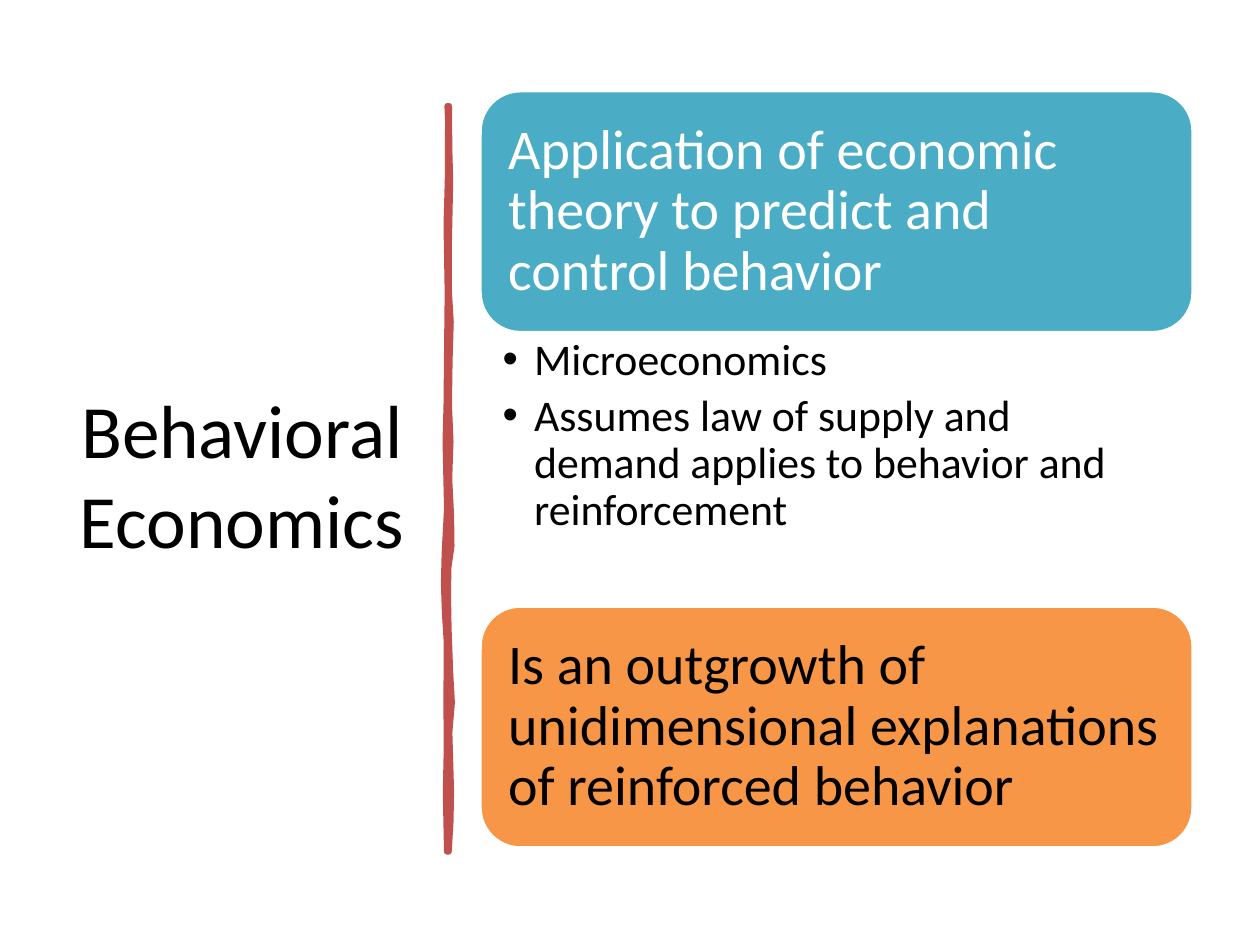
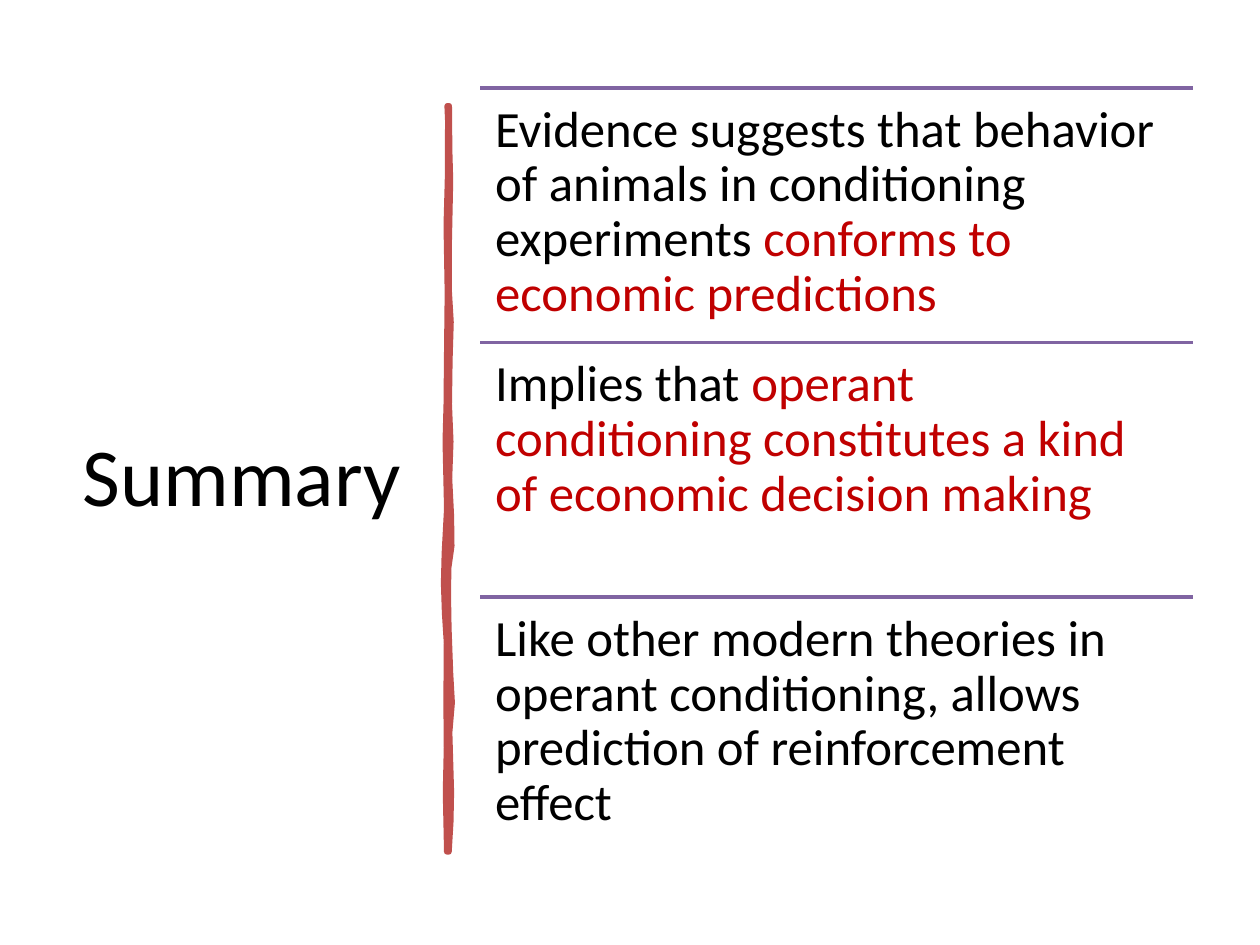
from lxml.etree import SubElement
from pptx import Presentation
from pptx.dml.color import RGBColor
from pptx.enum.shapes import MSO_CONNECTOR, MSO_SHAPE
from pptx.enum.text import MSO_ANCHOR, PP_ALIGN
from pptx.oxml.ns import qn
from pptx.util import Inches, Pt

COLORS = {"text": "000000", "light": "FFFFFF", "divider": "C0504D", "teal": "4BACC6",
          "orange": "F79646", "rule": "8064A2", "accent": "C00000"}
COLS, ROWS = 100, 75
CELL = Inches(10) / COLS
TITLE_BOX = (5.2, 7, 28, 61.1)
DIVIDER_BOX = (35.55, 8.4, 0, 59.2)
CARDS_BOX = (38.1, 7.2, 56.6, 60.1)
RULES_BOX = (38.1, 7, 56.6, 60.6)
RIGHT_EDGE = [(0, 0.1), (0.06, 0.13), (0.1, 0.2), (0.18, 0.1), (0.25, 0.1), (0.29, 0.24),
              (0.34, 0.15), (0.4, 0.1), (0.45, 0.22), (0.5, 0.12), (0.55, 0.27), (0.59, 0.3),
              (0.62, 0.05), (0.66, 0.03), (0.7, 0.07), (0.76, 0.2), (0.8, 0.33), (0.84, 0.13),
              (0.92, 0.27), (0.96, 0.22), (1, 0.08)]
LEFT_EDGE = [(1, -0.08), (0.92, -0.18), (0.86, -0.1), (0.8, -0.13), (0.72, -0.1),
             (0.68, -0.25), (0.64, -0.33), (0.6, -0.27), (0.54, -0.08), (0.45, -0.2),
             (0.4, -0.12), (0.33, -0.08), (0.25, -0.03), (0.16, -0.12), (0.1, -0.02),
             (0.02, 0), (0, -0.05)]


def grid(*values):
    """Turn grid units into slide lengths."""
    return [round(v * CELL) for v in values]


def rgb(name):
    """Look up a palette colour."""
    return RGBColor.from_string(COLORS[name])


def apply(obj, fmt):
    """Set every attribute named in a format dict."""
    for name, value in fmt.items():
        setattr(obj, name, value)


def frame(sp, inset, anchor=MSO_ANCHOR.TOP):
    """Prepare a wrapping text frame; inset is left, top, right, bottom in inches."""
    tf = sp.text_frame
    sides = ("margin_left", "margin_top", "margin_right", "margin_bottom")
    apply(tf, {"word_wrap": True, "vertical_anchor": anchor,
               **{side: Inches(v) for side, v in zip(sides, inset)}})
    return tf


def write(p, runs, size, fmt):
    """Fill a paragraph with (text, colour) runs."""
    apply(p, fmt)
    for text, color in runs:
        r = p.add_run()
        r.text = text
        apply(r.font, {"name": "Calibri", "size": Pt(size)})
        r.font.color.rgb = rgb(color)


def paint(sp, fill, line, width):
    """Give a shape a flat fill and outline."""
    sp.shadow.inherit = False
    sp.fill.solid()
    sp.fill.fore_color.rgb = rgb(fill)
    sp.line.color.rgb = rgb(line)
    sp.line.width = Pt(width)


def add_title(s, box, text, size):
    """Place the centred slide title."""
    tf = frame(s.shapes.add_textbox(*grid(*box)), (0.1, 0.05, 0.1, 0.05), MSO_ANCHOR.MIDDLE)
    write(tf.paragraphs[0], [(text, "text")], size, {"alignment": PP_ALIGN.CENTER})


def add_divider(s, box):
    """Draw the hand-drawn vertical stroke around the box's left side."""
    x, y, _, h = box
    points = [grid(x + dx, y + share * h) for share, dx in RIGHT_EDGE + LEFT_EDGE]
    fb = s.shapes.build_freeform(*points[0])
    fb.add_line_segments(points[1:], close=True)
    paint(fb.convert_to_shape(), "divider", "divider", 3.25)


def add_card(s, box, text, fill, color):
    """Place a rounded statement card."""
    sp = s.shapes.add_shape(MSO_SHAPE.ROUNDED_RECTANGLE, *grid(*box))
    paint(sp, fill, "light", 2)
    tf = frame(sp, (0.13,) * 4, MSO_ANCHOR.MIDDLE)
    write(tf.paragraphs[0], [(text, color)], 32,
          {"alignment": PP_ALIGN.LEFT, "line_spacing": 0.9})


def add_bullets(s, box, items):
    """Place a bulleted list."""
    tf = frame(s.shapes.add_textbox(*grid(*box)), (0.18, 0.04, 0.25, 0.04))
    for i, item in enumerate(items):
        p = tf.add_paragraph() if i else tf.paragraphs[0]
        write(p, [(item, "text")], 25, {"line_spacing": 0.9, "space_after": Pt(5)})
        pPr = p._p.get_or_add_pPr()
        pPr.set("marL", str(Inches(0.25)))
        pPr.set("indent", str(-Inches(0.25)))
        SubElement(pPr, qn("a:buFont"), typeface="Arial")
        SubElement(pPr, qn("a:buChar"), char="•")


def add_cards(s, box):
    """Stack two cards with a bulleted list between them."""
    x, y, w, h = box
    card_h = 19.2
    add_card(s, (x, y, w, card_h),
             "Application of economic theory to predict and control behavior", "teal", "light")
    add_bullets(s, (x, y + card_h, w, h - 2 * card_h),
                ["Microeconomics",
                 "Assumes law of supply and demand applies to behavior and reinforcement"])
    add_card(s, (x, y + h - card_h, w, card_h),
             "Is an outgrowth of unidimensional explanations of reinforced behavior",
             "orange", "text")


def add_ruled_rows(s, box, rows):
    """Split the box into equal rows, each under a rule."""
    x, y, w, h = box
    row_h = h / len(rows)
    for i, runs in enumerate(rows):
        top = y + i * row_h
        c = s.shapes.add_connector(MSO_CONNECTOR.STRAIGHT, *grid(x, top, x + w, top))
        c.line.color.rgb = rgb("rule")
        c.line.width = Pt(2)
        SubElement(c._element.spPr, qn("a:effectLst"))
        tf = frame(s.shapes.add_textbox(*grid(x, top, w, row_h)), (0.12,) * 4)
        write(tf.paragraphs[0], runs, 29, {"line_spacing": 0.9})


def new_slide(prs, title, size):
    """Add a slide with the shared title and divider."""
    s = prs.slides.add_slide(prs.slide_layouts[6])
    add_title(s, TITLE_BOX, title, size)
    add_divider(s, DIVIDER_BOX)
    return s


def main():
    """Build and save the presentation."""
    prs = Presentation()
    prs.slide_width, prs.slide_height = grid(COLS, ROWS)
    add_cards(new_slide(prs, "Behavioral Economics", 43), CARDS_BOX)
    add_ruled_rows(new_slide(prs, "Summary", 47), RULES_BOX, [
        [("Evidence suggests that behavior of animals in conditioning experiments ", "text"),
         ("conforms to economic predictions", "accent")],
        [("Implies that ", "text"),
         ("operant conditioning constitutes a kind of economic decision making", "accent")],
        [("Like other modern theories in operant conditioning, allows prediction of "
          "reinforcement effect", "text")],
    ])
    prs.save("out.pptx")


if __name__ == "__main__":
    main()
